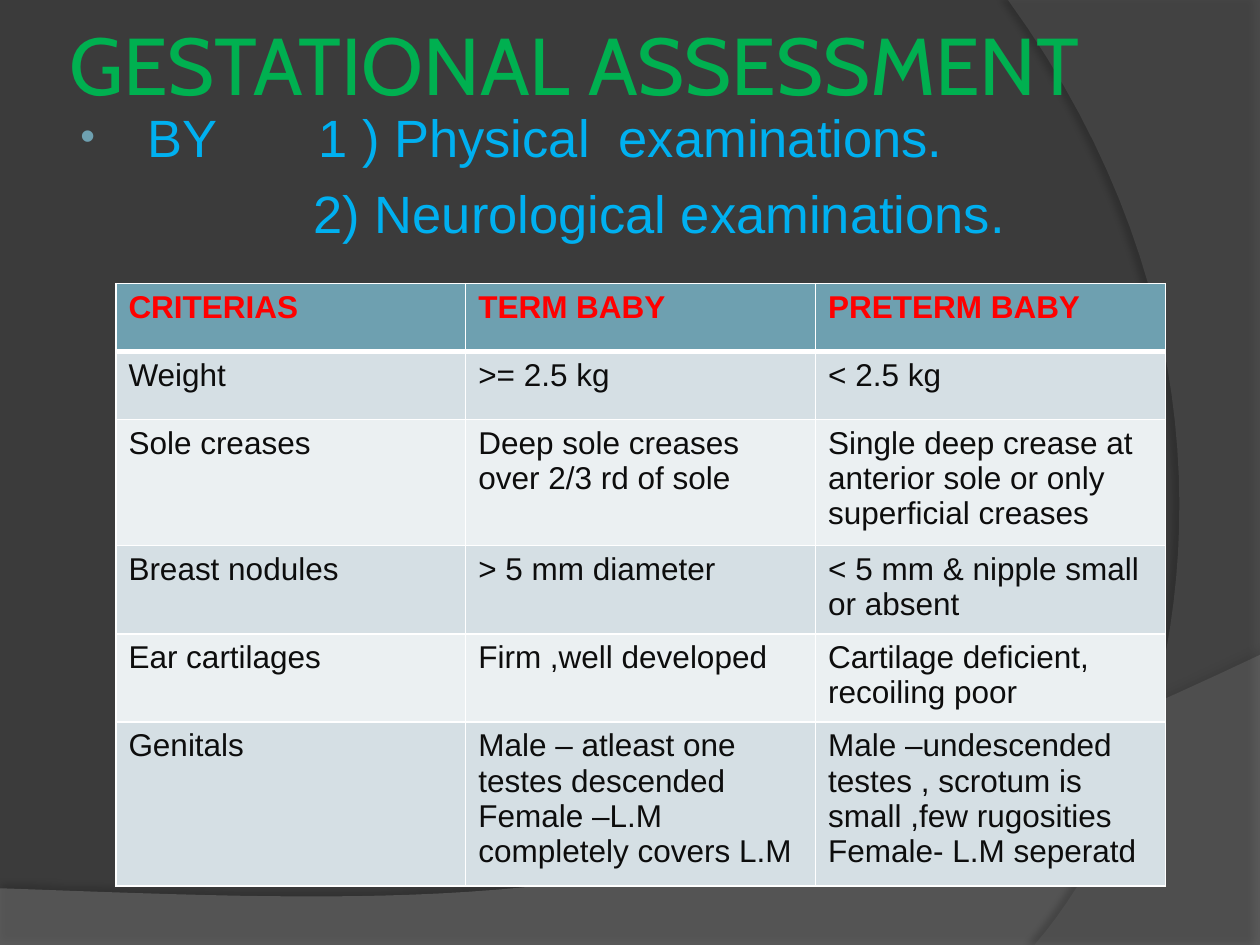
from lxml.etree import SubElement
from pptx import Presentation
from pptx.dml.color import RGBColor
from pptx.enum.text import MSO_ANCHOR, PP_ALIGN
from pptx.oxml.ns import qn
from pptx.util import Inches, Pt

WIDTH, HEIGHT = Inches(10), Inches(7.5)
WHITE, SKY, TEAL = "FFFFFF", "00B0F0", "6EA0B0"
BANDS = ("EBF0F2", "D5DFE4")
BODY_FONT = "Arial"
CURVE_STEPS = 40

TITLE_BOX = (0.05, 0, 0.867, 0.133)
METHODS_BOX = (0.05, 0.111, 0.875, 0.844)
TABLE_BOX = (0.092, 0.3, 0.833, 0.432)
TEXT_INDENT, LIST_INDENT = Inches(0.57), Inches(1.89)

CRITERIA = [
    ("CRITERIAS", "TERM BABY", "PRETERM BABY"),
    ("Weight", ">= 2.5 kg", "< 2.5 kg"),
    ("Sole creases", "Deep sole creases over 2/3 rd of sole",
     "Single deep crease at anterior sole or only superficial creases"),
    ("Breast nodules", "> 5 mm diameter", "< 5 mm & nipple small or absent"),
    ("Ear cartilages", "Firm ,well developed", "Cartilage deficient, recoiling poor"),
    ("Genitals",
     "Male – atleast one testes descended\nFemale –L.M completely covers L.M",
     "Male –undescended testes , scrotum is small ,few rugosities\nFemale- L.M seperatd"),
]


def colour(value):
    return RGBColor.from_string(value)


def place(box):
    left, top, width, height = box
    return (round(left * WIDTH), round(top * HEIGHT),
            round(width * WIDTH), round(height * HEIGHT))


def add_xml(parent, tag, **attributes):
    return SubElement(parent, qn(tag), {key: str(value) for key, value in attributes.items()})


def write(para, text, size=18, font=BODY_FONT, hue=WHITE, bold=False):
    para.alignment = PP_ALIGN.LEFT
    span = para.add_run()
    span.text = text
    span.font.size, span.font.name = Pt(size), font
    span.font.bold = bold
    span.font.color.rgb = colour(hue)


def bezier(start, first, second, end):
    for step in range(1, CURVE_STEPS + 1):
        t = step / CURVE_STEPS
        weights = ((1 - t) ** 3, 3 * t * (1 - t) ** 2, 3 * t * t * (1 - t), t ** 3)
        yield tuple(sum(weight * point[axis] for weight, point
                        in zip(weights, (start, first, second, end))) for axis in (0, 1))


def add_swoosh(page, corners, curve, hue, opacity, shade, blur, distance, direction):
    points = [(round(x * WIDTH), round(y * HEIGHT)) for x, y in [*corners, *bezier(*curve)]]
    builder = page.shapes.build_freeform(*points[0])
    builder.add_line_segments(points[1:], close=True)
    swoosh = builder.convert_to_shape()
    swoosh.fill.solid()
    swoosh.fill.fore_color.rgb = colour(hue)
    swoosh.line.fill.background()
    properties = swoosh.element.spPr
    add_xml(properties.find(qn("a:solidFill"))[0], "a:alpha", val=opacity * 1000)
    effects = add_xml(properties, "a:effectLst")
    shadow = add_xml(effects, "a:outerShdw", blurRad=Pt(blur), dist=Pt(distance),
                     dir=direction * 60000, algn="ctr", rotWithShape=0)
    add_xml(add_xml(shadow, "a:srgbClr", val="000000"), "a:alpha", val=shade * 1000)
    page.shapes.title.element.addprevious(swoosh.element)


def add_backdrop(page):
    page.background.fill.solid()
    page.background.fill.fore_color.rgb = colour("3B3B3B")
    add_swoosh(page, [(0, 0.94), (0, 1), (1, 1), (1, 0.693)],
               [(1, 0.693), (0.559, 0.972), (0.391, 0.959), (0, 0.94)],
               "7F7F7F", 45, shade=35, blur=4, distance=3.5, direction=270)
    add_swoosh(page, [(0.8, 0), (1, 0), (1, 1), (0.821, 1)],
               [(0.821, 1), (0.935, 0.825), (1.018, 0.4), (0.8, 0)],
               "5E5E5E", 40, shade=45, blur=4, distance=4, direction=180)


def add_title(page, box):
    title = page.shapes.title
    title.left, title.top, title.width, title.height = place(box)
    frame = title.text_frame
    frame.margin_left = frame.margin_right = Inches(0.05)
    frame.margin_top = frame.margin_bottom = Inches(0.05)
    frame.vertical_anchor = MSO_ANCHOR.MIDDLE
    frame.word_wrap = True
    write(frame.paragraphs[0], "GESTATIONAL ASSESSMENT", size=46, font="Cabin", hue="00B050")


def add_methods(page, box):
    frame = page.shapes.add_textbox(*place(box)).text_frame
    frame.word_wrap = True
    frame.margin_top = 0
    first, second = frame.paragraphs[0], frame.add_paragraph()
    write(first, "BY\t1 ) Physical  examinations.", size=30, hue=SKY)
    write(second, "2) Neurological examinations.", size=30, hue=SKY)
    for para, margin, indent in ((first, TEXT_INDENT, Inches(-0.53)), (second, LIST_INDENT, 0)):
        para.space_before = Pt(7.5)
        properties = para._p.get_or_add_pPr()
        properties.set("marL", str(margin))
        properties.set("indent", str(indent))
    properties = first._p.get_or_add_pPr()
    add_xml(add_xml(properties, "a:buClr"), "a:srgbClr", val=TEAL)
    add_xml(properties, "a:buSzPct", val=80000)
    add_xml(properties, "a:buFont", typeface=BODY_FONT)
    add_xml(properties, "a:buChar", char="•")
    add_xml(add_xml(properties, "a:tabLst"), "a:tab", pos=Inches(1.93), algn="l")


def format_cell(cell, text, row):
    header = row == 0
    widths = {"L": 1, "R": 1, "T": 3 if row == 1 else 1, "B": 3 if header else 1}
    properties = cell._tc.get_or_add_tcPr()
    for side, width in widths.items():
        border = add_xml(properties, f"a:ln{side}", w=Pt(width))
        add_xml(add_xml(border, "a:solidFill"), "a:srgbClr", val=WHITE)
    cell.fill.solid()
    cell.fill.fore_color.rgb = colour(TEAL if header else BANDS[row % 2])
    for index, line in enumerate(text.split("\n")):
        para = cell.text_frame.add_paragraph() if index else cell.text_frame.paragraphs[0]
        write(para, line, hue="FF0000" if header else "0D0D0D", bold=header)


def add_criteria(page, box):
    table = page.shapes.add_table(len(CRITERIA), len(CRITERIA[0]), *place(box)).table
    for row, texts in enumerate(CRITERIA):
        for column, text in enumerate(texts):
            format_cell(table.cell(row, column), text, row)


def main():
    deck = Presentation()
    deck.slide_width, deck.slide_height = WIDTH, HEIGHT
    page = deck.slides.add_slide(deck.slide_layouts.get_by_name("Title Only"))
    add_backdrop(page)
    add_title(page, TITLE_BOX)
    add_methods(page, METHODS_BOX)
    add_criteria(page, TABLE_BOX)
    deck.save("out.pptx")


if __name__ == "__main__":
    main()
